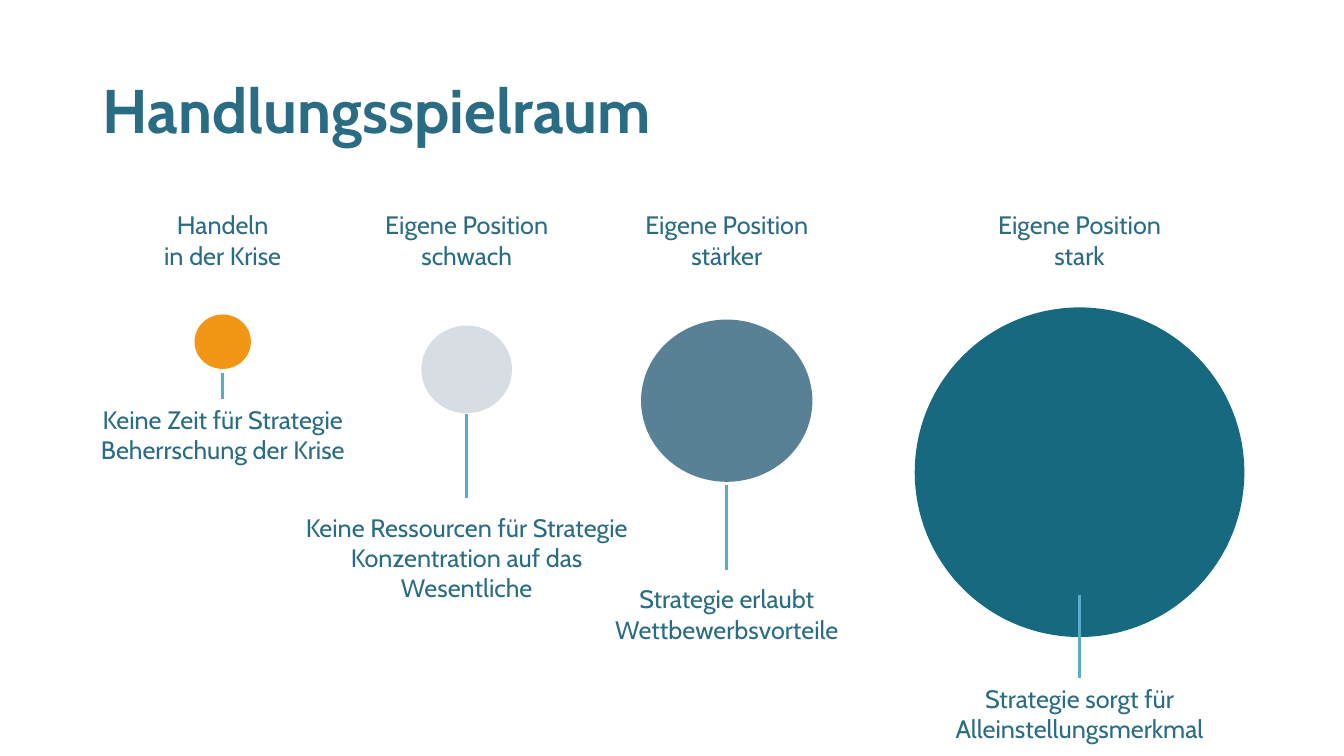
import dataclasses

import lxml.etree
import pptx
import pptx.dml.color
import pptx.enum.shapes
import pptx.enum.text
import pptx.oxml.ns
import pptx.shapes.autoshape
import pptx.slide
import pptx.util

SLIDE_WIDTH = pptx.util.Inches(13.333)
SLIDE_HEIGHT = pptx.util.Inches(7.5)
GRID_COLUMNS = 160
GRID_ROWS = 90
HEADING_TOP = 24.36
HEADING_WIDTH = 31.92
LABEL_HEIGHT = 8.52


@dataclasses.dataclass(frozen=True)
class Theme:
    font: str = "Cabin"
    text: str = "2A6C83"
    connector: str = "59ADCA"
    crisis: str = "F29715"
    weak: str = "D8DDE3"
    stronger: str = "588195"
    strong: str = "17697F"
    title_size: float = 44
    label_size: float = 18
    connector_width: float = 2


@dataclasses.dataclass(frozen=True)
class Position:
    center: float
    heading: str
    color: str
    circle_top: float
    circle_width: float
    circle_height: float
    stem_top: float
    stem_bottom: float
    caption: tuple[str, ...]
    caption_top: float
    caption_width: float = 45.12


THEME = Theme()

POSITIONS = (
    Position(26.52, "Handeln\nin der Krise", THEME.crisis, 37.44, 6.72, 6.48, 44.4, 47.52,
             ("Keine Zeit für Strategie", "Beherrschung der Krise"), 47.52, 31.68),
    Position(55.56, "Eigene Position\nschwach", THEME.weak, 38.76, 10.8, 10.44, 49.32, 59.28,
             ("Keine Ressourcen für Strategie", "Konzentration auf das Wesentliche"), 60.36),
    Position(86.52, "Eigene Position\nstärker", THEME.stronger, 38.04, 20.4, 19.32, 57.72, 67.8,
             ("Strategie erlaubt", "Wettbewerbsvorteile"), 68.88),
    Position(128.52, "Eigene Position\nstark", THEME.strong, 36.6, 39.24, 39.24, 70.8, 80.76,
             ("Strategie sorgt für Alleinstellungsmerkmal",), 80.76),
)


def columns(count: float) -> int:
    return round(SLIDE_WIDTH * count / GRID_COLUMNS)


def rows(count: float) -> int:
    return round(SLIDE_HEIGHT * count / GRID_ROWS)


def rgb(color: str) -> pptx.dml.color.RGBColor:
    return pptx.dml.color.RGBColor.from_string(color)


def add_text(slide: pptx.slide.Slide, left: float, top: float, width: float, height: float,
             paragraphs: tuple[str, ...], size: float = THEME.label_size,
             bold: bool = False) -> pptx.shapes.autoshape.Shape:
    box = slide.shapes.add_textbox(columns(left), rows(top), columns(width), rows(height))
    frame = box.text_frame
    frame.word_wrap = True
    for index, wording in enumerate(paragraphs):
        paragraph = frame.paragraphs[0] if index == 0 else frame.add_paragraph()
        paragraph.alignment = pptx.enum.text.PP_ALIGN.CENTER
        for line_index, line in enumerate(wording.split("\n")):
            if line_index:
                paragraph.add_line_break()
            run = paragraph.add_run()
            run.text = line
            run.font.name = THEME.font
            run.font.size = pptx.util.Pt(size)
            run.font.bold = bold
            run.font.color.rgb = rgb(THEME.text)
    return box


def add_title(slide: pptx.slide.Slide, wording: str) -> None:
    title = add_text(slide, 11.04, 4.8, 138, 17.4, (wording,), THEME.title_size, True)
    title.text_frame.vertical_anchor = pptx.enum.text.MSO_ANCHOR.MIDDLE
    paragraph = title.text_frame.paragraphs[0]
    paragraph.alignment = pptx.enum.text.PP_ALIGN.LEFT
    paragraph.line_spacing = 0.9


def add_label(slide: pptx.slide.Slide, center: float, top: float, width: float,
              paragraphs: tuple[str, ...]) -> None:
    label = add_text(slide, center - width / 2, top, width, LABEL_HEIGHT, paragraphs)
    label.text_frame.auto_size = pptx.enum.text.MSO_AUTO_SIZE.SHAPE_TO_FIT_TEXT


def add_circle(slide: pptx.slide.Slide, position: Position) -> None:
    circle = slide.shapes.add_shape(
        pptx.enum.shapes.MSO_SHAPE.OVAL,
        columns(position.center - position.circle_width / 2), rows(position.circle_top),
        columns(position.circle_width), rows(position.circle_height))
    circle.shadow.inherit = False
    circle.fill.solid()
    circle.fill.fore_color.rgb = rgb(position.color)
    circle.line.fill.background()


def add_stem(slide: pptx.slide.Slide, position: Position) -> None:
    center = columns(position.center)
    stem = slide.shapes.add_connector(
        pptx.enum.shapes.MSO_CONNECTOR.STRAIGHT,
        center, rows(position.stem_top), center, rows(position.stem_bottom))
    stem.line.color.rgb = rgb(THEME.connector)
    stem.line.width = pptx.util.Pt(THEME.connector_width)
    lxml.etree.SubElement(stem.element.spPr, pptx.oxml.ns.qn("a:effectLst"))


def add_position(slide: pptx.slide.Slide, position: Position) -> None:
    add_circle(slide, position)
    add_label(slide, position.center, HEADING_TOP, HEADING_WIDTH, (position.heading,))
    add_label(slide, position.center, position.caption_top, position.caption_width,
              position.caption)
    add_stem(slide, position)


def main() -> None:
    presentation = pptx.Presentation()
    presentation.slide_width = SLIDE_WIDTH
    presentation.slide_height = SLIDE_HEIGHT
    slide = presentation.slides.add_slide(presentation.slide_layouts[6])
    add_title(slide, "Handlungsspielraum")
    for position in POSITIONS:
        add_position(slide, position)
    presentation.save("out.pptx")


if __name__ == "__main__":
    main()
